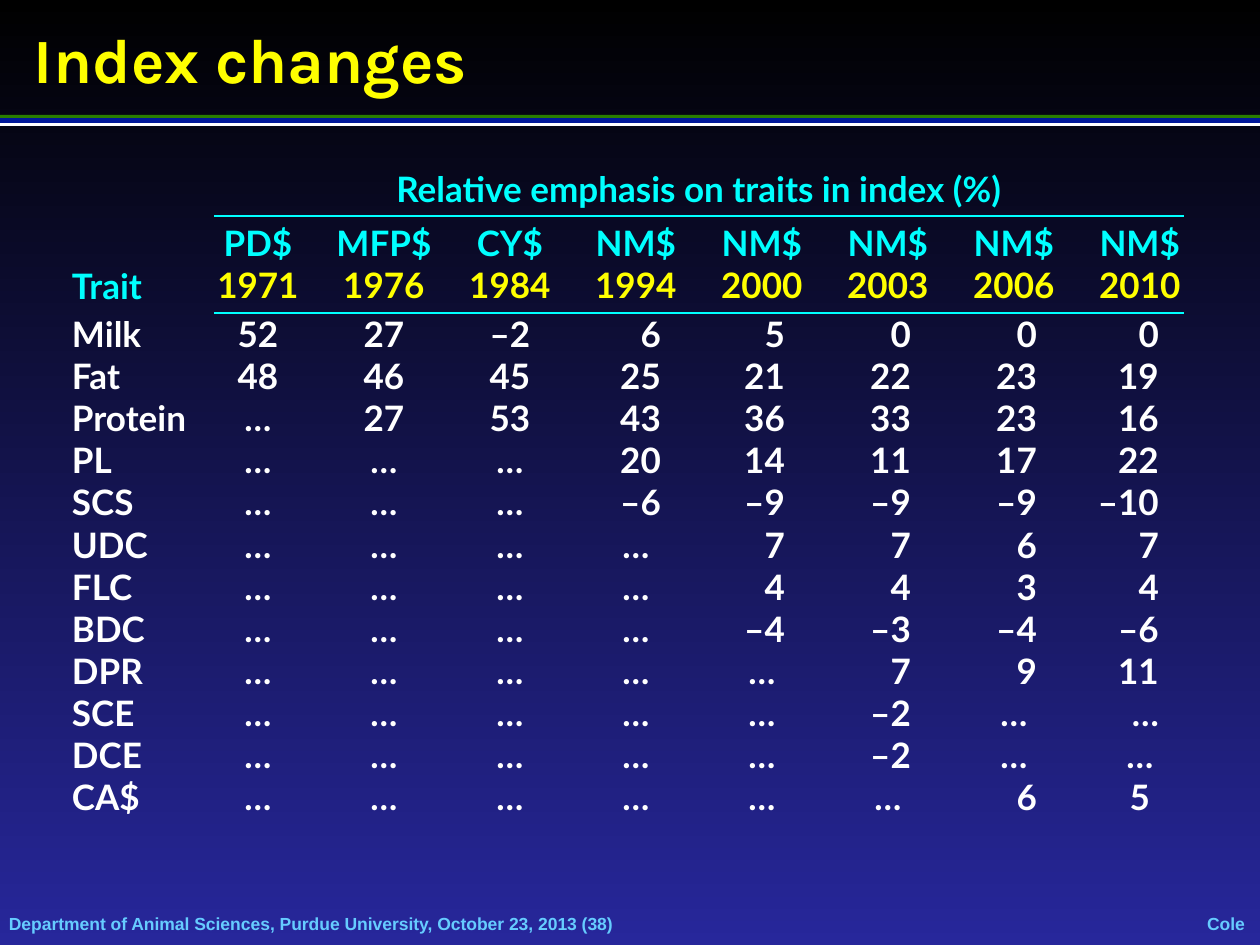
from lxml.etree import SubElement
from pptx import Presentation
from pptx.dml.color import RGBColor
from pptx.enum.shapes import MSO_SHAPE as Shape
from pptx.enum.text import MSO_ANCHOR as Anchor, PP_ALIGN as Align
from pptx.oxml.ns import qn
from pptx.util import Emu, Pt

COLORS = {
    "black": "000000", "navy": "27279B", "green": "2A7E00", "blue": "001799",
    "white": "FFFFFF", "yellow": "FFFF00", "cyan": "00FFFF", "sky": "66CCFF",
}
NO_STYLE = "{2D5ABB26-0587-4C30-8999-92F81FD0307C}"
COLUMN_WIDTHS = [142, 88, 164, 88, 164, 88, 164, 126, 88]
HEADER_HEIGHTS = [48, 97]
ROW_HEIGHT = 42
PAD = 6
INDEXES = [("PD$", "1971"), ("MFP$", "1976"), ("CY$", "1984"), ("NM$", "1994"),
           ("NM$", "2000"), ("NM$", "2003"), ("NM$", "2006"), ("NM$", "2010")]
TRAITS = [
    "Milk 52 27 –2 6 5 0 0 0",
    "Fat 48 46 45 25 21 22 23 19",
    "Protein … 27 53 43 36 33 23 16",
    "PL … … … 20 14 11 17 22",
    "SCS … … … –6 –9 –9 –9 –10",
    "UDC … … … … 7 7 6 7",
    "FLC … … … … 4 4 3 4",
    "BDC … … … … –4 –3 –4 –6",
    "DPR … … … … … 7 9 11",
    "SCE … … … … … –2 … …",
    "DCE … … … … … –2 … …",
    "CA$ … … … … … … 6 5",
]
NUMBER_INSETS = {4: 57, 5: 21, 6: 59, 7: 59, 8: 25}
CENTER_INSETS = {7: 38}
ALIGN_EXCEPTIONS = {("SCE", 8): Align.RIGHT, ("CA$", 8): Align.CENTER}


def px(value):
    return Emu(round(value * 914400 / 126))


def color(name):
    return RGBColor.from_string(COLORS[name])


def add_run(paragraph, text, size, font_name, color_name):
    run = paragraph.add_run()
    run.text = text
    run.font.size = Pt(size)
    run.font.name = font_name
    run.font.bold = True
    run.font.color.rgb = color(color_name)


def set_margins(target, left=0, top=0, right=0, bottom=0):
    target.margin_left, target.margin_top = px(left), px(top)
    target.margin_right, target.margin_bottom = px(right), px(bottom)


def set_background(slide):
    fill = slide.background.fill
    fill.gradient()
    fill.gradient_angle = 270
    for stop, position, name in zip(fill.gradient_stops, (0, 1), ("black", "navy")):
        stop.position = position
        stop.color.rgb = color(name)


def add_title(slide, left, top, width, height):
    title = slide.shapes.title
    title.left, title.top, title.width, title.height = map(px, (left, top, width, height))
    frame = title.text_frame
    frame.vertical_anchor = Anchor.MIDDLE
    set_margins(frame, 13, PAD, 13, PAD)
    frame.paragraphs[0].alignment = Align.LEFT
    add_run(frame.paragraphs[0], "Index changes", 36, "Karla", "yellow")


def add_rule(slide, left, top, width):
    for name, offset, height in (("green", 0, 4), ("white", 7, 4), ("blue", 3, 5)):
        bar = slide.shapes.add_shape(
            Shape.RECTANGLE, px(left), px(top + offset), px(width), px(height))
        bar.shadow.inherit = False
        bar.fill.solid()
        bar.fill.fore_color.rgb = color(name)
        bar.line.fill.background()


def add_footer_text(slide, text, left, top, width, height, align, wrap):
    frame = slide.shapes.add_textbox(*map(px, (left, top, width, height))).text_frame
    frame.word_wrap = wrap
    frame.vertical_anchor = Anchor.MIDDLE
    set_margins(frame)
    frame.paragraphs[0].alignment = align
    add_run(frame.paragraphs[0], text, 10, "Arial", "sky")


def add_footer(slide, left, top, width, height):
    add_footer_text(slide, "Department of Animal Sciences, Purdue University, October 23, 2013 (38)",
                    left, top, 1019, height, Align.LEFT, True)
    add_footer_text(slide, "Cole", left + width - 38, top, 38, height, Align.CENTER, False)


def set_border(cell, tag):
    properties = cell._tc.get_or_add_tcPr()
    line = SubElement(properties, qn(tag), w=str(Pt(1.5)))
    fill = SubElement(line, qn("a:solidFill"))
    SubElement(fill, qn("a:srgbClr"), val=COLORS["cyan"])
    properties.insert(0, line)


def write_cell(cell, lines, align=Align.LEFT, **margins):
    cell.fill.background()
    set_margins(cell, **margins)
    frame = cell.text_frame
    for number, (text, color_name) in enumerate(lines):
        paragraph = frame.add_paragraph() if number else frame.paragraphs[0]
        paragraph.alignment = align
        add_run(paragraph, text, 20, "Lato", color_name)


def write_header(table):
    trait = table.cell(0, 0)
    trait.merge(table.cell(1, 0))
    write_cell(trait, [("Trait", "cyan")], bottom=PAD)
    trait.vertical_anchor = Anchor.BOTTOM

    emphasis = table.cell(0, 1)
    emphasis.merge(table.cell(0, len(INDEXES)))
    write_cell(emphasis, [("Relative emphasis on traits in index (%)", "cyan")],
               Align.CENTER, bottom=PAD)

    for column, (index, year) in enumerate(INDEXES, 1):
        cell = table.cell(1, column)
        write_cell(cell, [(index, "cyan"), (year, "yellow")], Align.CENTER,
                   top=PAD, right=CENTER_INSETS.get(column, 0), bottom=PAD)
        set_border(table.cell(0, column), "a:lnB")
        set_border(cell, "a:lnT")


def write_trait(table, row, trait, values):
    write_cell(table.cell(row, 0), [(trait, "white")])
    for column, value in enumerate(values, 1):
        numeric = value != "…" and column in NUMBER_INSETS
        align = ALIGN_EXCEPTIONS.get((trait, column), Align.RIGHT if numeric else Align.CENTER)
        insets = NUMBER_INSETS if align == Align.RIGHT else CENTER_INSETS
        write_cell(table.cell(row, column), [(value, "white")], align,
                   right=insets.get(column, 0))


def add_emphasis_table(slide, left, top):
    heights = HEADER_HEIGHTS + [ROW_HEIGHT] * len(TRAITS)
    frame = slide.shapes.add_table(
        len(heights), len(COLUMN_WIDTHS), px(left), px(top),
        px(sum(COLUMN_WIDTHS)), px(sum(heights)))
    table = frame.table
    table.first_row = table.horz_banding = False
    for style in frame._element.iter(qn("a:tableStyleId")):
        style.text = NO_STYLE
    for column, width in zip(table.columns, COLUMN_WIDTHS):
        column.width = px(width)
    for row, height in zip(table.rows, heights):
        row.height = px(height)
    write_header(table)
    for row, line in enumerate(TRAITS, len(HEADER_HEIGHTS)):
        trait, *values = line.split()
        write_trait(table, row, trait, values)


def main():
    presentation = Presentation()
    presentation.slide_width, presentation.slide_height = px(1260), px(945)
    slide = presentation.slides.add_slide(presentation.slide_layouts[5])
    set_background(slide)
    add_footer(slide, 9, 912, 1236, 22)
    add_rule(slide, 0, 115, 1260)
    add_emphasis_table(slide, 72, 168)
    add_title(slide, 21, 16, 1134, 84)
    presentation.save("out.pptx")


if __name__ == "__main__":
    main()
